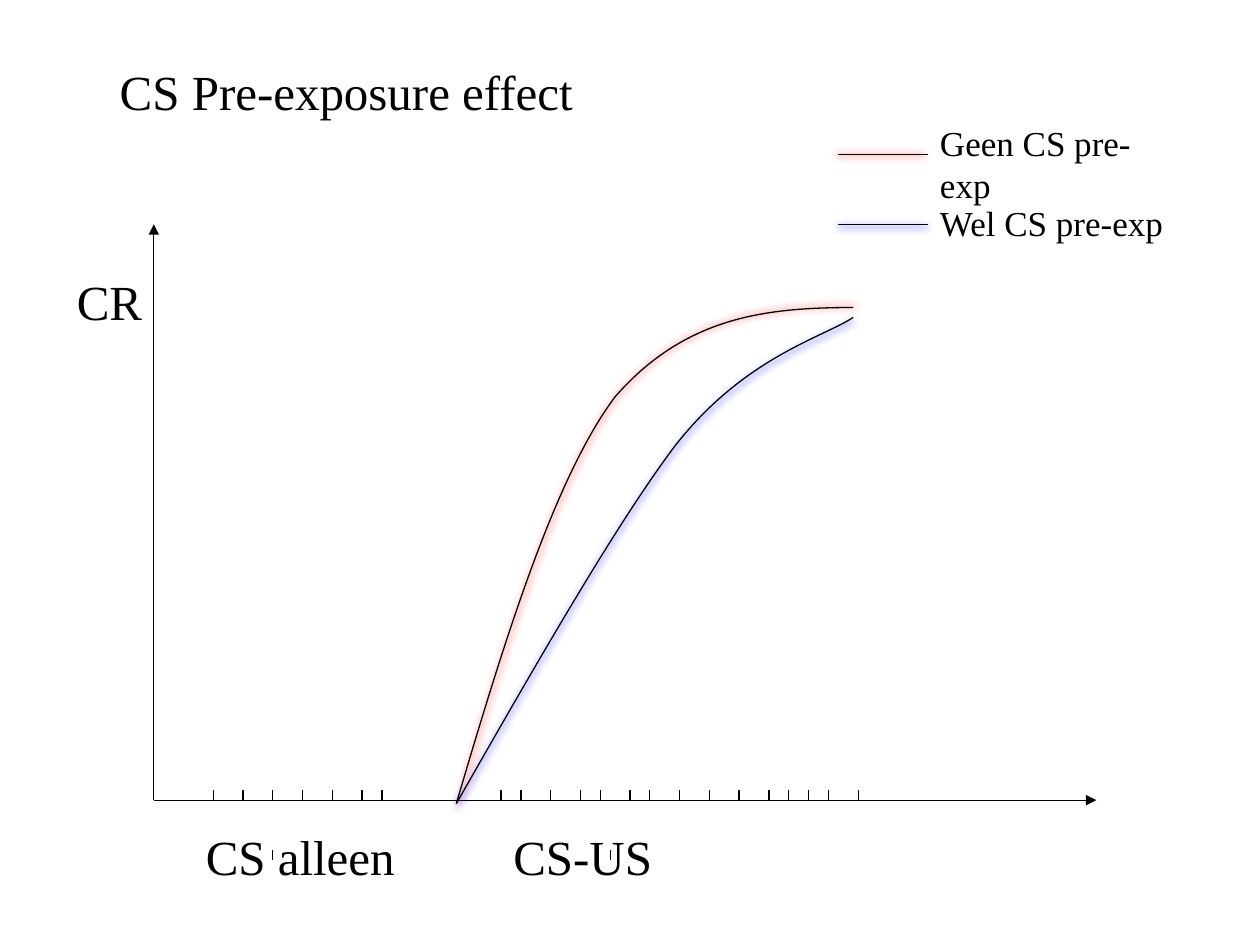
"""Build the CS pre-exposure effect slide: two acquisition curves on a 2 mm grid."""
from lxml.etree import SubElement
from pptx import Presentation
from pptx.dml.color import RGBColor as Rgb
from pptx.enum.shapes import MSO_CONNECTOR as Connector
from pptx.enum.text import MSO_ANCHOR as Anchor, MSO_AUTO_SIZE as AutoSize, PP_ALIGN as Align
from pptx.oxml.ns import qn
from pptx.util import Inches, Mm, Pt

THEME = {
    "ink": Rgb(0, 0, 0), "without": "FF0000", "with": "0000FF",
    "font": "Times New Roman", "large": Pt(28), "small": Pt(20), "line": Pt(0.75),
}
FRAME = {
    "word_wrap": True, "auto_size": AutoSize.NONE, "vertical_anchor": Anchor.TOP,
    "margin_left": Inches(0.1), "margin_right": Inches(0.1),
    "margin_top": Inches(0.05), "margin_bottom": Inches(0.05),
}
UNIT = Mm(2)
ORIGIN_X, ORIGIN_Y = 15.5, 80.65
AXIS_TOP, AXIS_RIGHT = 22.6, 110.5


def write(holder, words, size, box):
    for side, units in zip(("left", "top", "width", "height"), box):
        setattr(holder, side, round(units * UNIT))
    frame = holder.text_frame
    for name, value in FRAME.items():
        setattr(frame, name, value)
    frame.text = words
    paragraph = frame.paragraphs[0]
    paragraph.alignment = Align.LEFT
    for name, value in {"name": THEME["font"], "size": size, "bold": False}.items():
        setattr(paragraph.runs[0].font, name, value)
    paragraph.runs[0].font.color.rgb = THEME["ink"]


def stroke(outline, glow=None, arrow=False):
    outline.line.width = THEME["line"]
    outline.line.color.rgb = THEME["ink"]
    if arrow:
        SubElement(outline.line._get_or_add_ln(), qn("a:tailEnd"), type="triangle")
    effects = SubElement(outline._element.spPr, qn("a:effectLst"))
    if glow:
        color, angle = glow
        shadow = SubElement(effects, qn("a:outerShdw"), blurRad=str(Pt(4.5)),
                            dist=str(Pt(1.5)), dir=str(angle * 60000),
                            algn="ctr", rotWithShape="0")
        SubElement(shadow, qn("a:srgbClr"), val=color)


deck = Presentation()
deck.slide_width, deck.slide_height = Inches(10), Inches(7.5)
slide = deck.slides.add_slide(deck.slide_layouts[5])
shapes = slide.shapes

write(shapes.title, "CS Pre-exposure effect", THEME["large"], (10.8, 5.6, 108, 9))

for words, size, box in (
    ("CR", "large", (6.5, 26.7, 9.5, 7.2)),
    ("CS alleen", "large", (19.5, 82.7, 22, 7.2)),
    ("CS-US", "large", (50.5, 82.7, 17, 7.2)),
    ("Geen CS pre-exp", "small", (93.5, 11.6, 26.5, 5.5)),
    ("Wel CS pre-exp", "small", (93.5, 19.7, 25.5, 5.5)),
):
    write(shapes.add_textbox(0, 0, UNIT, UNIT), words, THEME[size], box)

trials = (6, 9, 12, 15, 18, 21, 23, 35, 37, 40, 43, 45, 48, 50,
          53, 56, 59, 62, 64, 66, 68, 71)
ticks = [(trial, 0) for trial in trials] + [(12, 6), (46, 6)]
segments = [
    ((ORIGIN_X, ORIGIN_Y, ORIGIN_X, AXIS_TOP), None, True),
    ((ORIGIN_X, ORIGIN_Y, AXIS_RIGHT, ORIGIN_Y), None, True),
    ((84.5, 15.6, 93.5, 15.6), (THEME["without"], 177), False),
    ((84.5, 22.6, 93.5, 22.6), (THEME["with"], 90), False),
]
for trial, drop in ticks:
    x, y = ORIGIN_X + trial, ORIGIN_Y + drop
    segments.append(((x, y, x, y - 1), None, False))
for ends, glow, arrow in segments:
    places = [round(units * UNIT) for units in ends]
    stroke(shapes.add_connector(Connector.STRAIGHT, *places), glow, arrow)

curves = (
    ("without", 323, ((51.2, 64.5), (55.75, 48.4), (62.3, 40),
                      (68.8, 31.7), (77.2, 31.1), (85.5, 30.6))),
    ("with", 90, ((54.2, 66.7), (62, 52.8), (68.5, 44.6),
                  (75, 36.4), (82.7, 33.8), (85.5, 31.6))),
)
for group, angle, controls in curves:
    builder = shapes.build_freeform(46.5, ORIGIN_Y, scale=UNIT)
    builder.add_line_segments(controls, close=False)
    curve = builder.convert_to_shape()
    outline = curve._element.xpath(".//a:path")[0]
    steps = outline.findall(qn("a:lnTo"))
    for first in range(0, len(steps), 3):
        bend = SubElement(outline, qn("a:cubicBezTo"))
        for step in steps[first:first + 3]:
            bend.append(step[0])
            outline.remove(step)
    curve.fill.background()
    stroke(curve, (THEME[group], angle))

deck.save("out.pptx")
